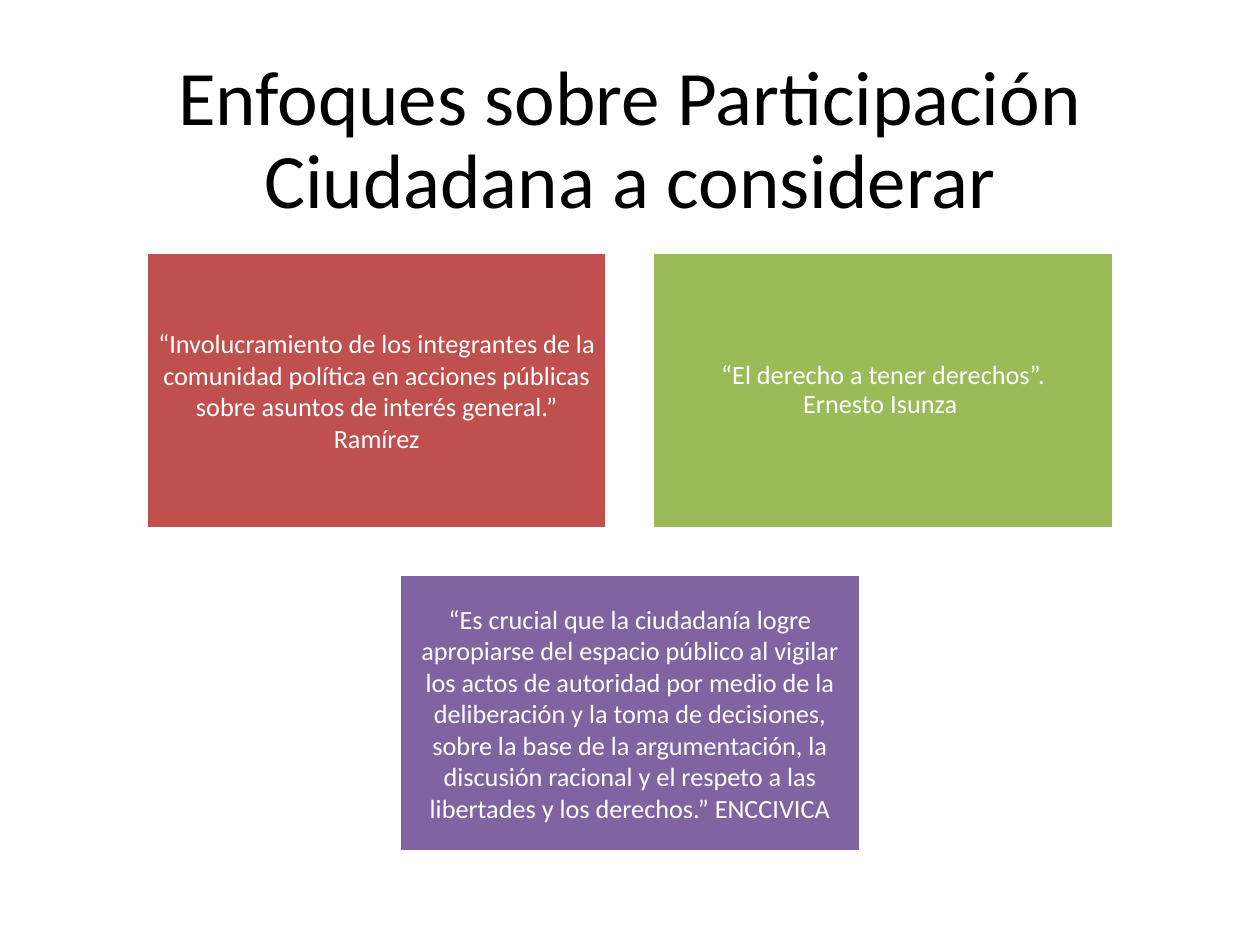
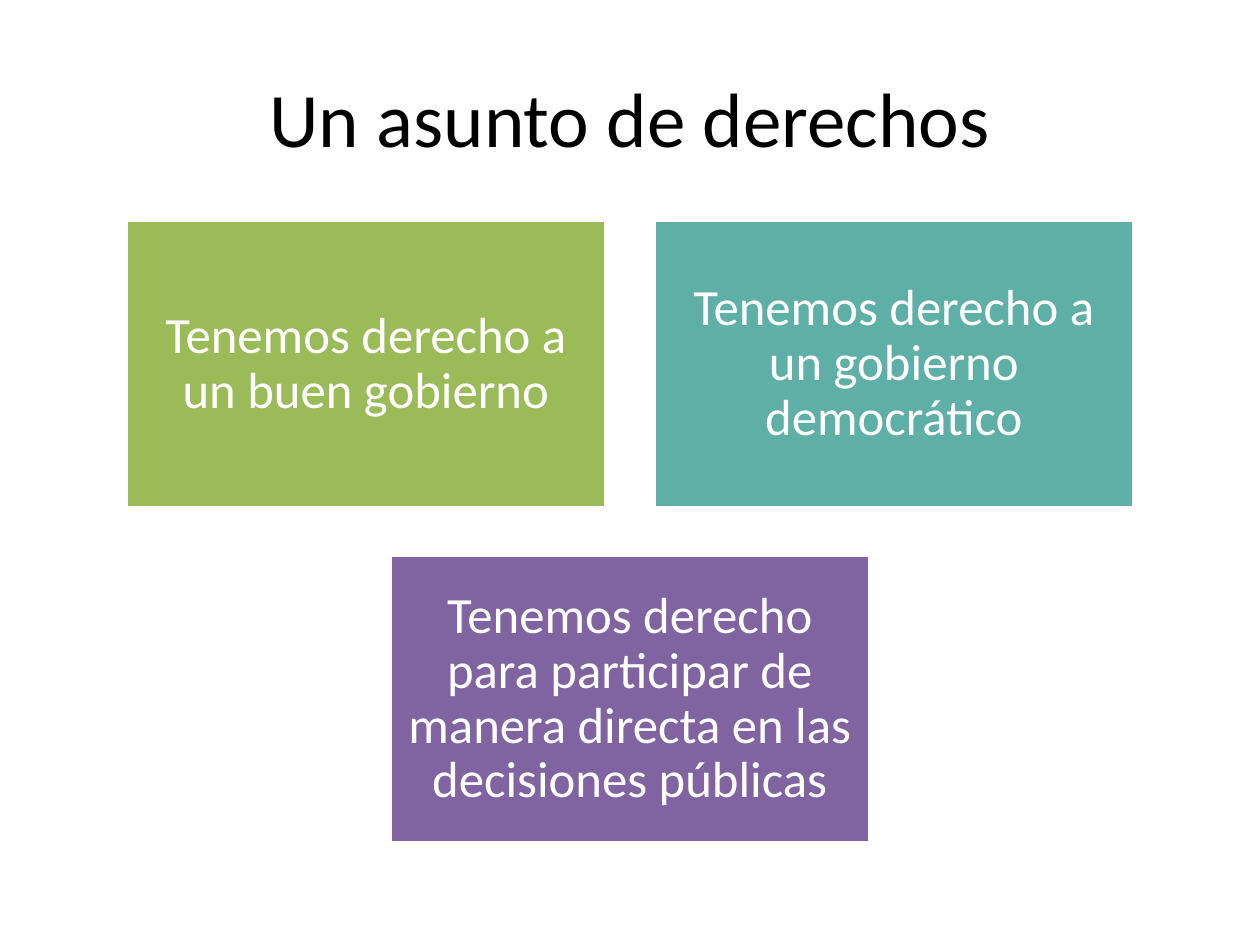
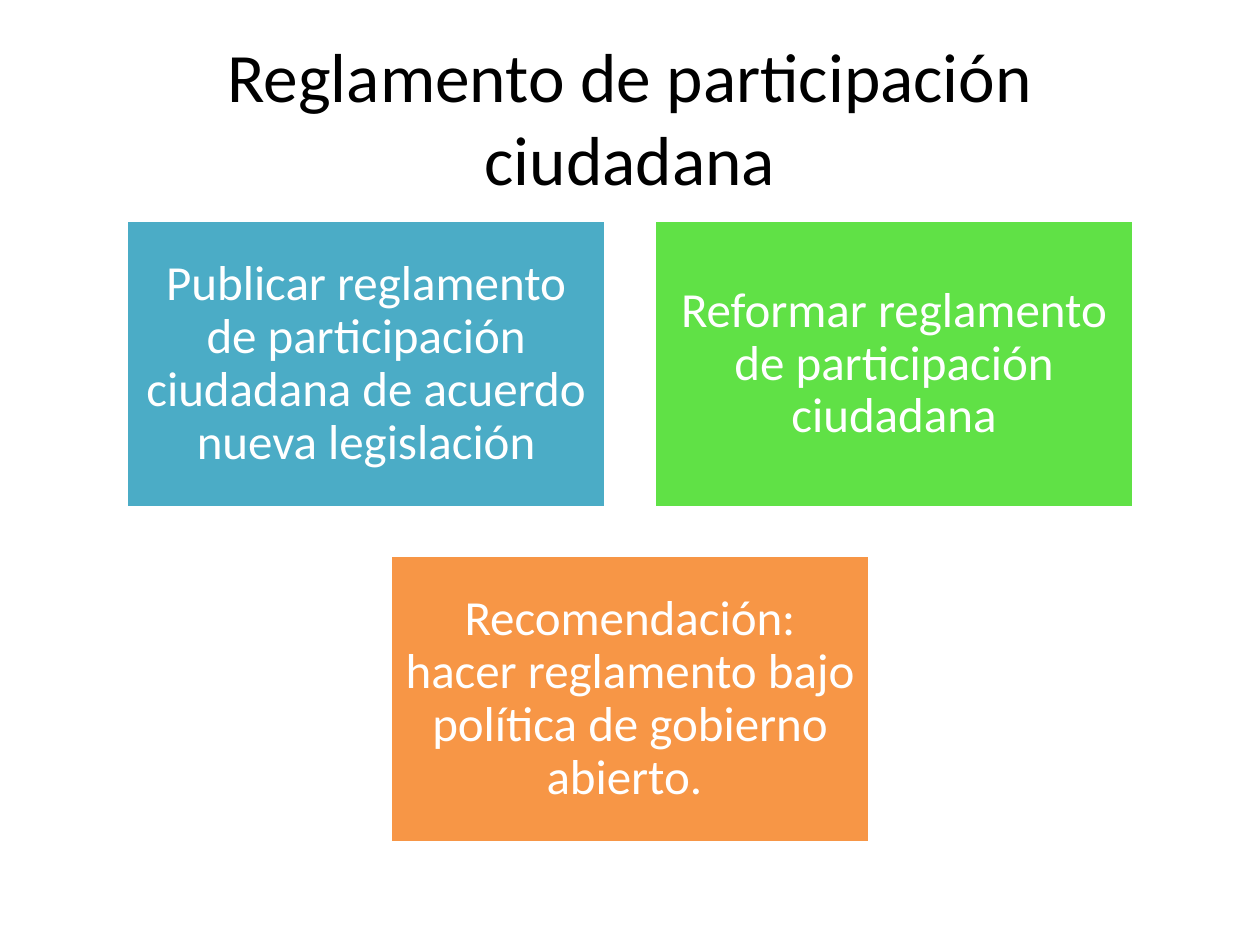
from dataclasses import dataclass

from pptx import Presentation
from pptx.dml.color import RGBColor
from pptx.enum.shapes import MSO_SHAPE as Shape
from pptx.enum.text import MSO_ANCHOR as Anchor, PP_ALIGN as Align
from pptx.util import Inches, Pt

FONT = "Calibri"
SLIDE_W, SLIDE_H = 10, 7.5
WHITE = RGBColor(0xFF, 0xFF, 0xFF)
BLACK = RGBColor(0x00, 0x00, 0x00)
RED = RGBColor(0xC0, 0x50, 0x4D)
OLIVE = RGBColor(0x9B, 0xBB, 0x59)
PURPLE = RGBColor(0x80, 0x64, 0xA2)
TEAL = RGBColor(0x5E, 0xAF, 0xA6)
BLUE = RGBColor(0x4B, 0xAC, 0xC6)
GREEN = RGBColor(0x60, 0xE1, 0x46)
ORANGE = RGBColor(0xF7, 0x96, 0x46)


@dataclass(frozen=True)
class Title:
    text: str
    size: float = 44
    box: tuple[float, float, float, float] = (0.5, 0.3, 9, 1.25)
    spacing: float = 1.0


@dataclass(frozen=True)
class Card:
    text: str
    fill: RGBColor
    spacing: float = 0.9


@dataclass(frozen=True)
class Grid:
    """Two cards above one, all centred on the slide."""
    top: float = 1.75
    width: float = 3.81
    height: float = 2.28
    gap: float = 0.38
    inset: float = 0.12

    def positions(self) -> list[tuple[float, float]]:
        mid = SLIDE_W / 2
        return [
            (mid - self.gap / 2 - self.width, self.top),
            (mid + self.gap / 2, self.top),
            (mid - self.width / 2, self.top + self.height + self.gap),
        ]


@dataclass(frozen=True)
class CardSlide:
    title: Title
    cards: tuple[Card, Card, Card]
    card_size: float
    grid: Grid = Grid()


SLIDES = [
    CardSlide(
        Title("Enfoques sobre Participación Ciudadana a considerar",
              box=(0.69, 0.4, 8.62, 1.45), spacing=0.9),
        (
            Card("“Involucramiento de los integrantes de la comunidad política en "
                 "acciones públicas sobre asuntos de interés general.” Ramírez",
                 RED, spacing=1.0),
            Card("“El derecho a tener derechos”.\nErnesto Isunza ", OLIVE),
            Card("“Es crucial que la ciudadanía logre apropiarse del espacio público "
                 "al vigilar los actos de autoridad por medio de la deliberación y la "
                 "toma de decisiones, sobre la base de la argumentación, la discusión "
                 "racional y el respeto a las libertades y los derechos.” ENCCIVICA",
                 PURPLE, spacing=1.0),
        ),
        card_size=15,
        grid=Grid(top=2, width=3.66, height=2.2, gap=0.36, inset=0.06),
    ),
    CardSlide(
        Title("Un asunto de derechos"),
        (
            Card("Tenemos derecho a un buen gobierno", OLIVE),
            Card("Tenemos derecho a un gobierno democrático", TEAL),
            Card("Tenemos derecho para participar de manera directa en las "
                 "decisiones públicas", PURPLE),
        ),
        card_size=29,
    ),
    CardSlide(
        Title("Reglamento de participación ciudadana", size=39.6),
        (
            Card("Publicar reglamento de participación ciudadana de acuerdo nueva "
                 "legislación", BLUE),
            Card("Reformar reglamento de participación ciudadana", GREEN),
            Card("Recomendación: hacer reglamento bajo política de gobierno abierto. ",
                 ORANGE),
        ),
        card_size=28,
    ),
]


def write_centred(sp, text: str, size: float, color: RGBColor,
                  spacing: float, inset_x: float, inset_y: float) -> None:
    tf = sp.text_frame
    frame_format = {
        "word_wrap": True,
        "vertical_anchor": Anchor.MIDDLE,
        "margin_left": Inches(inset_x),
        "margin_right": Inches(inset_x),
        "margin_top": Inches(inset_y),
        "margin_bottom": Inches(inset_y),
    }
    for name, value in frame_format.items():
        setattr(tf, name, value)
    p = tf.paragraphs[0]
    p.text = text
    p.alignment = Align.CENTER
    p.line_spacing = spacing
    for r in p.runs:
        for name, value in {"name": FONT, "size": Pt(size)}.items():
            setattr(r.font, name, value)
        r.font.color.rgb = color


def add_title(s, title: Title) -> None:
    sp = s.shapes.add_textbox(*map(Inches, title.box))
    write_centred(sp, title.text, title.size, BLACK, title.spacing, 0.15, 0.05)


def add_card(s, card: Card, left: float, top: float, grid: Grid, size: float) -> None:
    sp = s.shapes.add_shape(Shape.RECTANGLE, Inches(left), Inches(top),
                            Inches(grid.width), Inches(grid.height))
    sp.shadow.inherit = False
    sp.fill.solid()
    sp.fill.fore_color.rgb = card.fill
    sp.line.color.rgb = WHITE
    sp.line.width = Pt(2)
    write_centred(sp, card.text, size, WHITE, card.spacing, grid.inset, grid.inset)


def main() -> None:
    prs = Presentation()
    prs.slide_width, prs.slide_height = Inches(SLIDE_W), Inches(SLIDE_H)
    blank = prs.slide_layouts[6]
    for spec_slide in SLIDES:
        s = prs.slides.add_slide(blank)
        add_title(s, spec_slide.title)
        grid = spec_slide.grid
        for card, (left, top) in zip(spec_slide.cards, grid.positions()):
            add_card(s, card, left, top, grid, spec_slide.card_size)
    prs.save("out.pptx")


if __name__ == "__main__":
    main()
